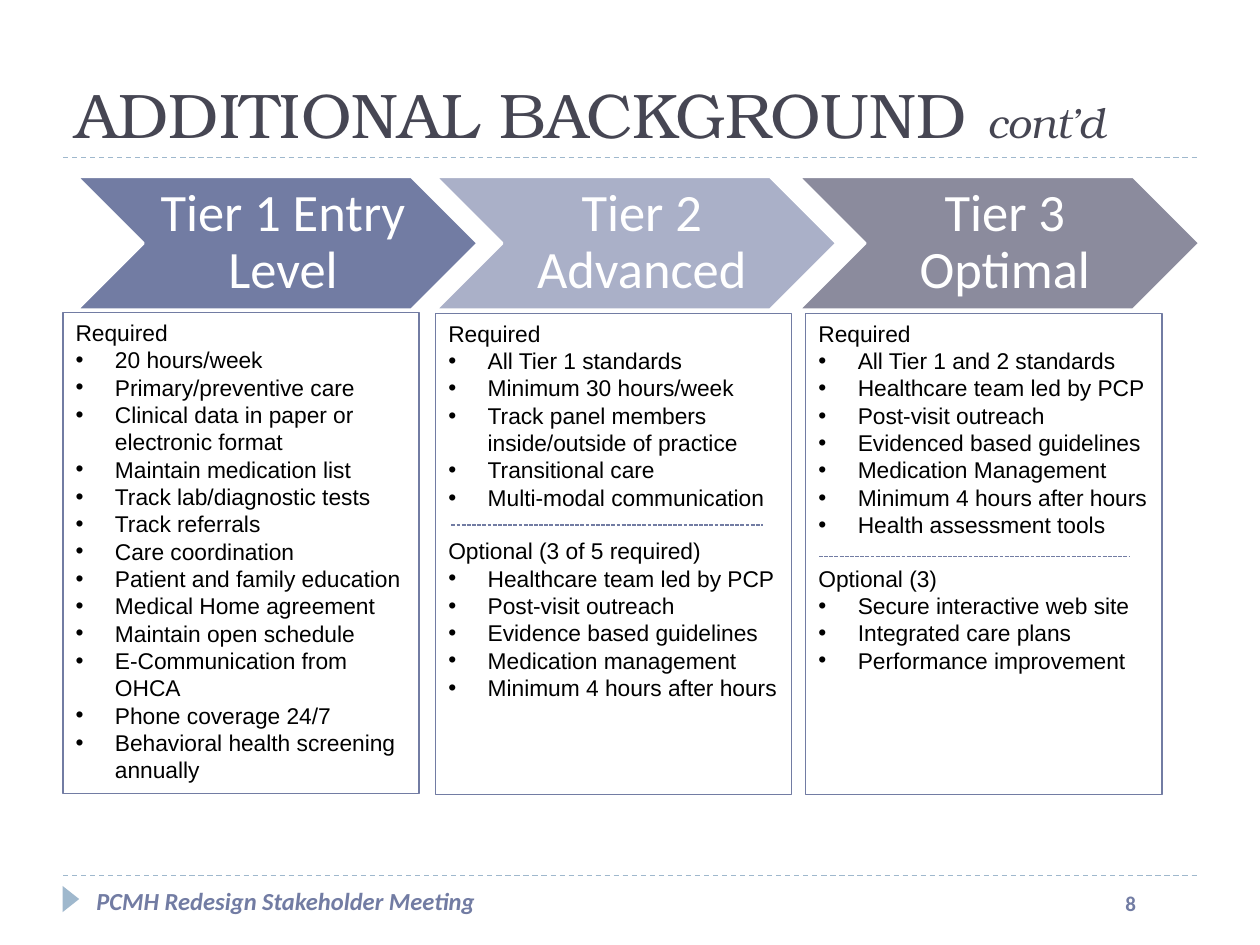
from dataclasses import dataclass

from lxml import etree
from pptx import Presentation
from pptx.dml.color import RGBColor
from pptx.enum.dml import MSO_LINE
from pptx.enum.shapes import MSO_CONNECTOR, MSO_SHAPE
from pptx.enum.text import MSO_ANCHOR, MSO_AUTO_SIZE, PP_ALIGN
from pptx.oxml.ns import qn
from pptx.util import Pt

STRAIGHT = MSO_CONNECTOR.STRAIGHT
CHEVRON, TRIANGLE = MSO_SHAPE.CHEVRON, MSO_SHAPE.ISOSCELES_TRIANGLE
DASH, FINE_DASH = MSO_LINE.DASH, MSO_LINE.SQUARE_DOT
TOP, MIDDLE, BOTTOM = MSO_ANCHOR.TOP, MSO_ANCHOR.MIDDLE, MSO_ANCHOR.BOTTOM
LEFT, CENTER = PP_ALIGN.LEFT, PP_ALIGN.CENTER
NO_AUTOFIT = MSO_AUTO_SIZE.NONE
COMPARISON_LAYOUT = 3 + 1


@dataclass(frozen=True)
class Theme:
    ink: str = "464653"
    accent: str = "727CA3"
    rule: str = "9FB8CD"
    white: str = "FFFFFF"
    black: str = "000000"
    title_font: str = "TeX Gyre Bonum"
    label_font: str = "Calibri"
    list_font: str = "Arial"
    title_size: int = 36
    suffix_size: int = 24
    tier_size: int = 30
    list_size: int = 13
    footer_size: int = 14
    number_size: int = 12


THEME = Theme()
INDENT = Pt(22.5)
SECTION_GAP = Pt(15)

# Each tier: heading, colour, chevron left, box (left, top), sections, divider
TIERS = [
    ("Tier 1 Entry Level", "727CA3", 44, (36, 178.5), {
        "Required": [
            "20 hours/week", "Primary/preventive care",
            "Clinical data in paper or electronic format",
            "Maintain medication list", "Track lab/diagnostic tests",
            "Track referrals", "Care coordination",
            "Patient and family education", "Medical Home agreement",
            "Maintain open schedule", "E-Communication from OHCA",
            "Phone coverage 24/7", "Behavioral health screening annually"],
    }, None),
    ("Tier 2 Advanced", "AAB0C8", 249, (249, 179), {
        "Required": [
            "All Tier 1 standards", "Minimum 30 hours/week",
            "Track panel members inside/outside of practice",
            "Transitional care", "Multi-modal communication"],
        "Optional (3 of 5 required)": [
            "Healthcare team led by PCP", "Post-visit outreach",
            "Evidence based guidelines", "Medication management",
            "Minimum 4 hours after hours"],
    }, (258, 436, 300)),
    ("Tier 3 Optimal", "8B8B9D", 456.5, (460.5, 179), {
        "Required": [
            "All Tier 1 and 2 standards", "Healthcare team led by PCP",
            "Post-visit outreach", "Evidenced based guidelines",
            "Medication Management", "Minimum 4 hours after hours",
            "Health assessment tools"],
        "Optional (3)": [
            "Secure interactive web site", "Integrated care plans",
            "Performance improvement"],
    }, (468, 646, 318)),
]


def apply(target, formats):
    for name, value in formats.items():
        setattr(target, name, value)


def place(shape, left, top, width, height):
    apply(shape, {"left": Pt(left), "top": Pt(top),
                  "width": Pt(width), "height": Pt(height)})


def add_run(paragraph, text, font, size, color, bold=False, italic=False):
    run = paragraph.add_run()
    run.text = text
    apply(run.font, {"name": font, "size": Pt(size),
                     "bold": bold, "italic": italic})
    run.font.color.rgb = RGBColor.from_string(color)


def add_rule(slide, left, right, y, color, dash):
    rule = slide.shapes.add_connector(STRAIGHT, Pt(left), Pt(y), Pt(right), Pt(y))
    rule.line.color.rgb = RGBColor.from_string(color)
    apply(rule.line, {"width": Pt(0.75), "dash_style": dash})
    etree.SubElement(rule.element.spPr, qn("a:effectLst"))


def add_filled(slide, kind, left, top, width, height, color):
    shape = slide.shapes.add_shape(kind, Pt(left), Pt(top), Pt(width), Pt(height))
    shape.shadow.inherit = False
    shape.fill.solid()
    shape.fill.fore_color.rgb = RGBColor.from_string(color)
    shape.line.fill.background()
    return shape


def add_label(slide, text, left, top, width, height, size, italic=False):
    label = slide.shapes.add_textbox(Pt(left), Pt(top), Pt(width), Pt(height))
    label.text_frame.word_wrap = True
    add_run(label.text_frame.paragraphs[0], text, THEME.label_font, size,
            THEME.accent, bold=True, italic=italic)


def add_chevron(slide, heading, color, left):
    chevron = add_filled(slide, CHEVRON, left, 101, 229, 76, color)
    chevron.line.color.rgb = RGBColor.from_string(THEME.white)
    chevron.line.width = Pt(1.5)
    frame = chevron.text_frame
    apply(frame, {"word_wrap": True, "vertical_anchor": MIDDLE,
                  "margin_left": Pt(9.5), "margin_right": Pt(3),
                  "margin_top": Pt(3), "margin_bottom": Pt(3)})
    paragraph = frame.paragraphs[0]
    apply(paragraph, {"alignment": CENTER, "line_spacing": 0.9})
    add_run(paragraph, heading, THEME.label_font, THEME.tier_size, THEME.white)


def set_bullet(paragraph, bulleted):
    properties = paragraph._p.get_or_add_pPr()
    properties.set("marL", str(INDENT if bulleted else 0))
    properties.set("indent", str(-INDENT if bulleted else 0))
    if bulleted:
        etree.SubElement(properties, qn("a:buFont"), typeface=THEME.list_font)
        etree.SubElement(properties, qn("a:buChar"), char="•")
    else:
        etree.SubElement(properties, qn("a:buNone"))


def fill_standards(box, left, top, sections):
    place(box, left, top, 203.5, 275)
    box.line.color.rgb = RGBColor.from_string(THEME.accent)
    box.line.width = Pt(0.75)
    frame = box.text_frame
    apply(frame, {"word_wrap": True, "vertical_anchor": TOP,
                  "auto_size": NO_AUTOFIT})
    lines = [(text, text != section) for section, items in sections.items()
             for text in [section, *items]]
    for number, (text, bulleted) in enumerate(lines):
        paragraph = frame.add_paragraph() if number else frame.paragraphs[0]
        starts_later_section = number and not bulleted
        apply(paragraph, {
            "alignment": LEFT, "line_spacing": 1.0, "space_after": Pt(0),
            "space_before": SECTION_GAP if starts_later_section else Pt(0)})
        set_bullet(paragraph, bulleted)
        add_run(paragraph, text, THEME.list_font, THEME.list_size, THEME.black)


def fill_title(title):
    place(title, 36, 30, 678, 60)
    apply(title.text_frame, {"word_wrap": True, "vertical_anchor": BOTTOM,
                             "auto_size": NO_AUTOFIT})
    paragraph = title.text_frame.paragraphs[0]
    paragraph.alignment = LEFT
    add_run(paragraph, "ADDITIONAL BACKGROUND ", THEME.title_font,
            THEME.title_size, THEME.ink)
    add_run(paragraph, "cont’d", THEME.title_font, THEME.suffix_size,
            THEME.ink, italic=True)


def main():
    deck = Presentation()
    apply(deck, {"slide_width": Pt(720), "slide_height": Pt(540)})
    slide = deck.slides.add_slide(deck.slide_layouts[COMPARISON_LAYOUT])
    title, *boxes = slide.placeholders

    # Frame rules and title
    for y in (90, 500.5):
        add_rule(slide, 36, 684, y, THEME.rule, DASH)
    fill_title(title)

    # Tier columns
    for box, tier in zip(boxes, TIERS):
        heading, color, chevron_left, corner, sections, divider = tier
        add_chevron(slide, heading, color, chevron_left)
        fill_standards(box, *corner, sections)
        if divider:
            add_rule(slide, *divider, THEME.accent, FINE_DASH)
    for spare in boxes[len(TIERS):]:
        spare.element.getparent().remove(spare.element)

    # Footer
    marker = add_filled(slide, TRIANGLE, 33, 509, 15, 9.5, THEME.rule)
    marker.rotation = 90
    add_label(slide, "PCMH Redesign Stakeholder Meeting", 48, 502.5, 336, 37,
              THEME.footer_size, italic=True)
    add_label(slide, "8", 636, 505.5, 42, 29, THEME.number_size)

    deck.save("out.pptx")


if __name__ == "__main__":
    main()
